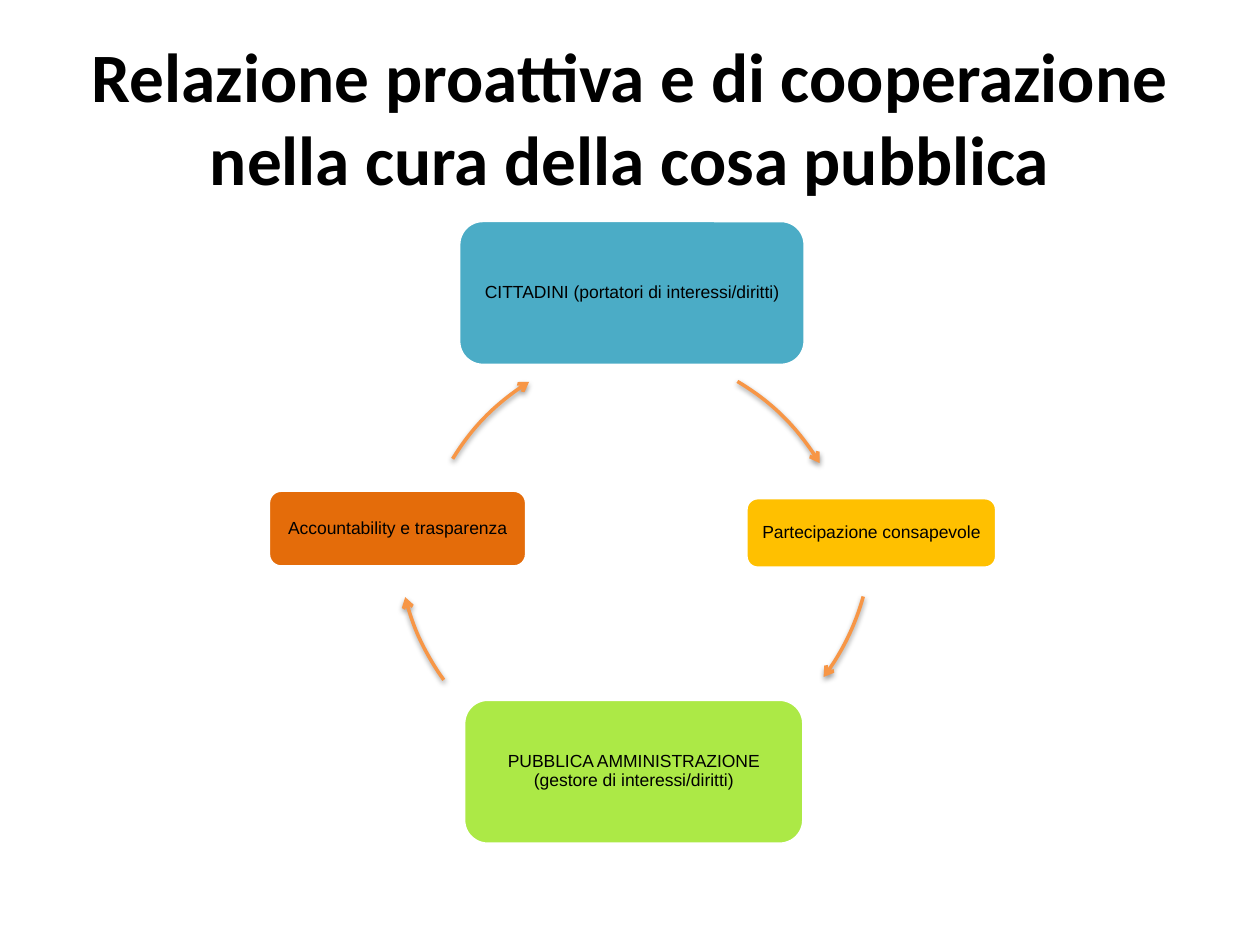
from dataclasses import dataclass

import pptx
import pptx.dml.color
import pptx.enum.shapes
import pptx.enum.text
import pptx.oxml
import pptx.oxml.ns
import pptx.slide
import pptx.util

Inches = pptx.util.Inches
RGBColor = pptx.dml.color.RGBColor
ShapeType = pptx.enum.shapes.MSO_SHAPE

BLACK = RGBColor(0x00, 0x00, 0x00)
WHITE = RGBColor(0xFF, 0xFF, 0xFF)
BLUE = RGBColor(0x4B, 0xAC, 0xC6)
YELLOW = RGBColor(0xFF, 0xC0, 0x00)
GREEN = RGBColor(0xAC, 0xE9, 0x46)
ORANGE = RGBColor(0xE4, 0x6C, 0x0A)
ARROW_ORANGE = RGBColor(0xF7, 0x96, 0x46)

ARC_DIAMETER = 3.8
ADJUSTMENT_PER_DEGREE = 0.6


@dataclass
class Stage:
    text: str
    left: float
    top: float
    width: float
    height: float
    color: RGBColor


@dataclass
class CycleArrow:
    left: float
    top: float
    start_degrees: float
    end_degrees: float


STAGES = [
    Stage("CITTADINI (portatori di interessi/diritti)", 3.64, 1.75, 2.75, 1.15, BLUE),
    Stage("Partecipazione consapevole", 5.92, 3.95, 1.99, 0.56, YELLOW),
    Stage("PUBBLICA AMMINISTRAZIONE (gestore di interessi/diritti)", 3.68, 5.55, 2.7, 1.15, GREEN),
    Stage("Accountability e trasparenza", 2.13, 3.89, 2.05, 0.61, ORANGE),
]

ARROWS = [
    CycleArrow(2.98, 2.76, 300.8, 328.8),
    CycleArrow(3.12, 2.33, 15.4, 37),
    CycleArrow(3.16, 2.38, 144, 166),
    CycleArrow(3.31, 2.74, 211.7, 237.9),
]


def set_title(slide: pptx.slide.Slide, text: str) -> None:
    title = slide.shapes.title
    title.left, title.top = Inches(0.5), Inches(0.3)
    title.width, title.height = Inches(9), Inches(1.25)
    frame = title.text_frame
    frame.text = text
    frame.auto_size = pptx.enum.text.MSO_AUTO_SIZE.NONE
    frame.vertical_anchor = pptx.enum.text.MSO_ANCHOR.MIDDLE
    paragraph = frame.paragraphs[0]
    paragraph.alignment = pptx.enum.text.PP_ALIGN.CENTER
    paragraph.font.name = "Calibri"
    paragraph.font.size = pptx.util.Pt(39.6)
    paragraph.font.bold = True
    paragraph.font.color.rgb = BLACK


def draw_stage(slide: pptx.slide.Slide, stage: Stage) -> None:
    box = slide.shapes.add_shape(
        ShapeType.ROUNDED_RECTANGLE,
        Inches(stage.left), Inches(stage.top), Inches(stage.width), Inches(stage.height),
    )
    box.shadow.inherit = False
    box.fill.solid()
    box.fill.fore_color.rgb = stage.color
    box.line.color.rgb = WHITE
    box.line.width = pptx.util.Pt(2)
    frame = box.text_frame
    frame.word_wrap = True
    frame.vertical_anchor = pptx.enum.text.MSO_ANCHOR.MIDDLE
    frame.margin_left = frame.margin_right = Inches(0.04)
    frame.margin_top = frame.margin_bottom = Inches(0.04)
    frame.text = stage.text
    paragraph = frame.paragraphs[0]
    paragraph.alignment = pptx.enum.text.PP_ALIGN.CENTER
    paragraph.line_spacing = 0.9
    paragraph.font.name = "Arial"
    paragraph.font.size = pptx.util.Pt(10)
    paragraph.font.color.rgb = BLACK


def draw_arrow(slide: pptx.slide.Slide, arrow: CycleArrow) -> None:
    arc = slide.shapes.add_shape(
        ShapeType.ARC,
        Inches(arrow.left), Inches(arrow.top), Inches(ARC_DIAMETER), Inches(ARC_DIAMETER),
    )
    arc.adjustments[0] = arrow.start_degrees * ADJUSTMENT_PER_DEGREE
    arc.adjustments[1] = arrow.end_degrees * ADJUSTMENT_PER_DEGREE
    arc.fill.background()
    arc.line.color.rgb = ARROW_ORANGE
    arc.line.width = pptx.util.Pt(2)
    arc.shadow.inherit = False
    namespace = pptx.oxml.ns.nsdecls("a")
    properties = arc._element.spPr
    line = properties.find(pptx.oxml.ns.qn("a:ln"))
    line.append(pptx.oxml.parse_xml(f'<a:tailEnd {namespace} type="arrow"/>'))
    effects = properties.find(pptx.oxml.ns.qn("a:effectLst"))
    effects.append(pptx.oxml.parse_xml(
        f'<a:outerShdw {namespace} blurRad="40000" dist="20000" dir="5400000" rotWithShape="0">'
        '<a:srgbClr val="000000"><a:alpha val="38000"/></a:srgbClr></a:outerShdw>'
    ))


def main() -> None:
    deck = pptx.Presentation()
    deck.slide_width, deck.slide_height = Inches(10), Inches(7.5)
    slide = deck.slides.add_slide(deck.slide_layouts.get_by_name("Title Only"))
    set_title(slide, "Relazione proattiva e di cooperazione nella cura della cosa pubblica")
    for stage, arrow in zip(STAGES, ARROWS):
        draw_stage(slide, stage)
        draw_arrow(slide, arrow)
    deck.save("out.pptx")


if __name__ == "__main__":
    main()
